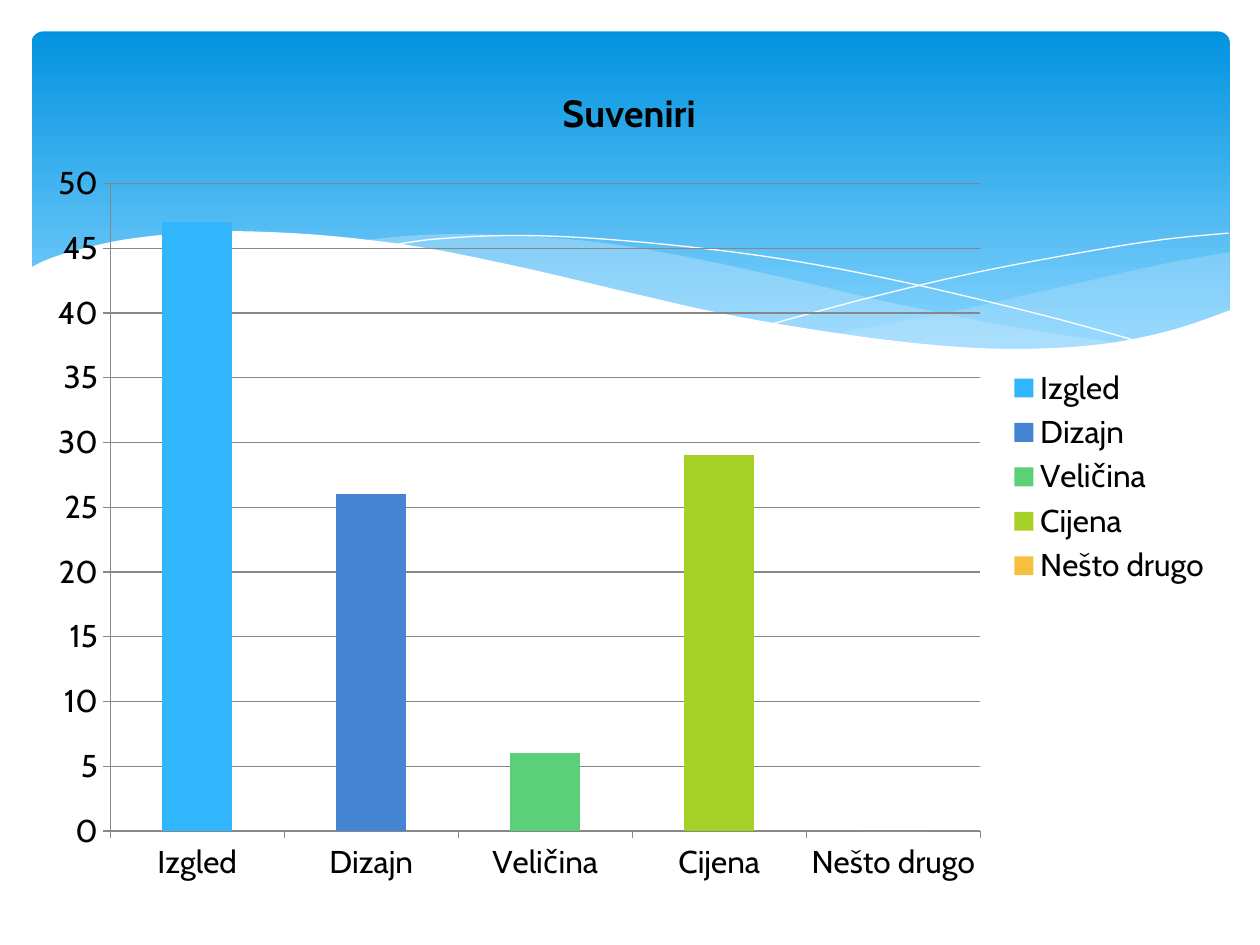
"""Build the souvenir survey slide: a column chart over a blue wave banner."""
from lxml.etree import SubElement
from pptx import Presentation
from pptx.chart.data import CategoryChartData
from pptx.dml.color import RGBColor
from pptx.enum.chart import XL_CHART_TYPE as ChartType, XL_LEGEND_POSITION as LegendSide, XL_TICK_MARK as Tick
from pptx.enum.shapes import MSO_SHAPE as Preset
from pptx.oxml.ns import qn
from pptx.util import Pt

FONT = "Cabin"
BLACK = RGBColor(0x00, 0x00, 0x00)
WHITE = RGBColor(0xFF, 0xFF, 0xFF)
GRAY = RGBColor(0x87, 0x87, 0x87)
DEEP_BLUE = RGBColor(0x02, 0x93, 0xE0)
LIGHT_BLUE = RGBColor(0x83, 0xD3, 0xFE)
MIST = RGBColor(0xC6, 0xE7, 0xFC)
BAR_COLORS = [
    RGBColor(0x31, 0xB6, 0xFD),
    RGBColor(0x45, 0x84, 0xD3),
    RGBColor(0x5B, 0xD0, 0x78),
    RGBColor(0xA5, 0xD0, 0x28),
    RGBColor(0xF5, 0xC0, 0x40),
]
STEPS = 6


def smooth_curve(knots):
    """Return points of a Catmull-Rom curve through the knots."""
    ends = [knots[0], *knots, knots[-1]]
    points = [knots[0]]
    for a, b, c, d in zip(ends, ends[1:], ends[2:], ends[3:]):
        for step in range(1, STEPS + 1):
            t = step / STEPS
            points.append(tuple(
                (2 * q + (r - p) * t + (2 * p - 5 * q + 4 * r - s) * t**2 + (3 * q - p - 3 * r + s) * t**3) / 2
                for p, q, r, s in zip(a, b, c, d)
            ))
    return points


def add_wave(page, points, fill=None, alpha=100):
    """Draw a filled wave, or a thin white line when no fill is given."""
    scaled = [(x * 100, y * 100) for x, y in points]
    builder = page.shapes.build_freeform(*scaled[0], scale=Pt(0.01))
    builder.add_line_segments(scaled[1:], close=fill is not None)
    wave = builder.convert_to_shape()
    wave.shadow.inherit = False
    if fill is None:
        wave.fill.background()
        wave.line.color.rgb = WHITE
        wave.line.width = Pt(0)
        return
    wave.line.fill.background()
    wave.fill.solid()
    wave.fill.fore_color.rgb = fill
    if alpha < 100:
        color = wave.fill._xPr.find(qn("a:solidFill"))[0]
        SubElement(color, qn("a:alpha")).set("val", str(alpha * 1000))


deck = Presentation()
deck.slide_width, deck.slide_height = Pt(720), Pt(540)
page = deck.slides.add_slide(deck.slide_layouts[6])

banner = page.shapes.add_shape(Preset.ROUNDED_RECTANGLE, Pt(18), Pt(18), Pt(684.7), Pt(194.4))
banner.adjustments[0] = 0.034
banner.shadow.inherit = False
banner.line.fill.background()
banner.fill.gradient()
banner.fill.gradient_angle = 270
for stop, color, position in zip(banner.fill.gradient_stops, (DEEP_BLUE, LIGHT_BLUE), (0, 0.9)):
    stop.color.rgb = color
    stop.position = position

right_top = [(702.7, 144), (663, 151.2), (599, 165.6), (542, 178.6), (476, 190.8)]
right_bottom = [(476, 190.8), (527, 197.3), (578, 200.2), (621, 198), (663, 190.8), (702.7, 177.8)]
middle_top = [
    (643, 196.6), (581, 187.2), (508.3, 172.8), (452.9, 159.8), (389.5, 146.2),
    (334, 137.5), (273.6, 133.9), (236.2, 134.6), (206, 137.5),
]
middle_bottom = [
    (206, 137.5), (260.6, 146.2), (323.3, 159.8), (381.6, 172.8), (445, 185.8),
    (500.4, 194.4), (548, 199.4), (589, 200.9), (617, 199.4), (643, 196.6),
]
falling_line = [
    (222.5, 140.4), (247, 136.8), (288.7, 134.6), (337.7, 136.1), (400.3, 141.8),
    (457.9, 149.8), (523.4, 162.7), (598.3, 180.7), (653, 195.8),
]
rising_line = [(441.4, 185), (500.4, 169.2), (558.7, 155.5), (623.5, 143.3), (665.3, 136.8), (702, 133.2)]
white_edge = [
    (703.4, 177.1), (669.6, 188.6), (630, 196.6), (582.5, 199.4), (535.7, 197.3), (481, 190.8),
    (416.9, 180), (362.2, 167.8), (301, 153.4), (244, 141.8), (195, 135.4), (152, 132.5),
    (116, 132.5), (76.3, 136.1), (48.2, 141.8), (28.8, 147.6), (16.6, 153.4),
]

add_wave(page, smooth_curve(right_top) + smooth_curve(right_bottom), MIST, 29)
add_wave(page, smooth_curve(middle_top) + smooth_curve(middle_bottom), MIST, 40)
add_wave(page, smooth_curve(falling_line))
add_wave(page, smooth_curve(rising_line))
add_wave(page, smooth_curve(white_edge) + [(16.6, 236.9), (703.4, 236.9)], WHITE)

survey = CategoryChartData()
survey.categories = ["Izgled", "Dizajn", "Veličina", "Cijena", "Nešto drugo"]
survey.add_series("Suveniri", [47, 26, 6, 29, 0])
frame = page.shapes.add_chart(ChartType.COLUMN_CLUSTERED, Pt(19.4), Pt(31.7), Pt(680.4), Pt(481.7), survey)
chart = frame.chart
chart.font.name = FONT
chart.font.size = Pt(18)
chart.font.color.rgb = BLACK

chart.has_title = True
span = chart.chart_title.text_frame.paragraphs[0].add_run()
span.text = "Suveniri"
span.font.name = FONT
span.font.size = Pt(21.6)
span.font.bold = True
span.font.color.rgb = BLACK
chart.chart_title.include_in_layout = False

chart.has_legend = True
chart.legend.position = LegendSide.RIGHT
chart.legend.include_in_layout = False

for axis in (chart.category_axis, chart.value_axis):
    axis.major_tick_mark = Tick.OUTSIDE
    axis.minor_tick_mark = Tick.NONE
    axis.format.line.color.rgb = GRAY
    axis.format.line.width = Pt(0.75)
chart.value_axis.minimum_scale = 0
chart.value_axis.maximum_scale = 50
chart.value_axis.major_unit = 5
chart.value_axis.has_major_gridlines = True
grid_line = chart.value_axis.major_gridlines.format.line
grid_line.color.rgb = GRAY
grid_line.width = Pt(0.75)

plot = chart.plots[0]
plot.gap_width = 150
plot.vary_by_categories = True
for index, color in enumerate(BAR_COLORS):
    bar = plot.series[0].points[index]
    bar.format.fill.solid()
    bar.format.fill.fore_color.rgb = color

deck.save("out.pptx")
